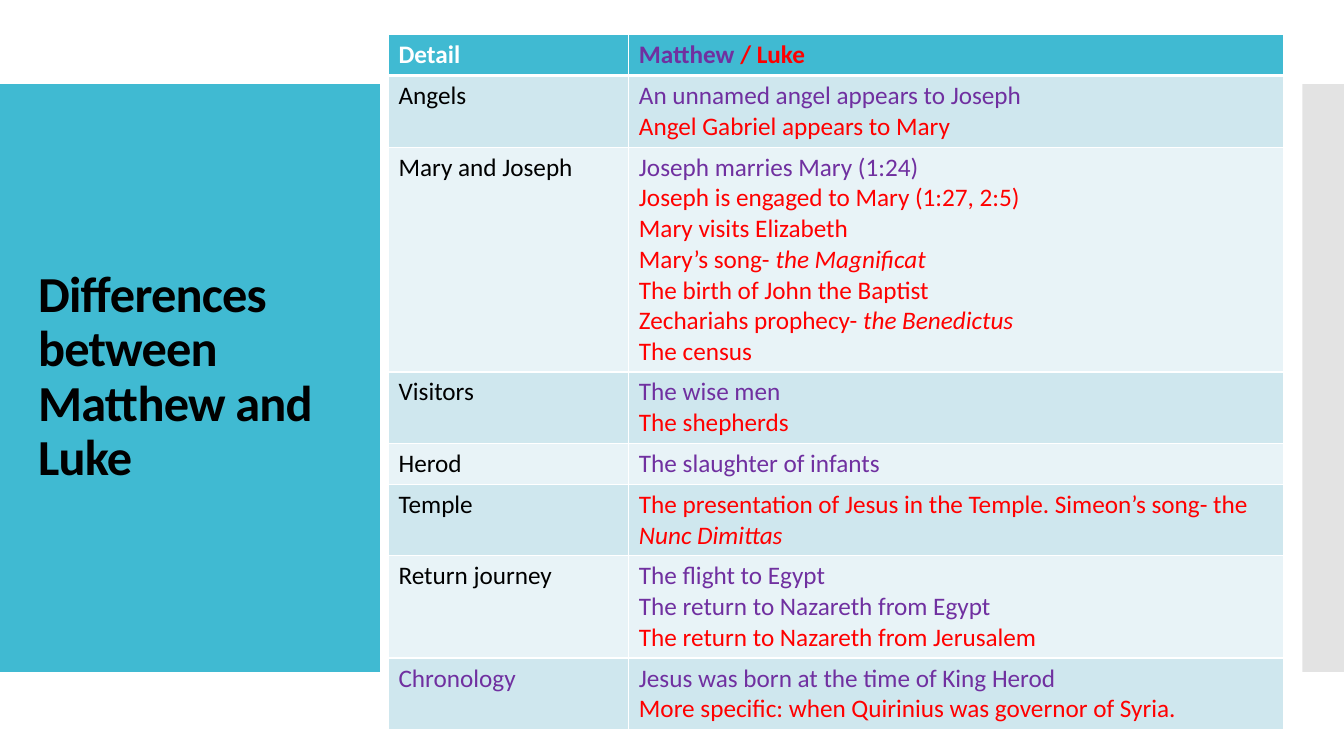
from dataclasses import dataclass
from typing import NamedTuple

from lxml.etree import SubElement
from pptx import Presentation
from pptx.dml.color import RGBColor
from pptx.enum.shapes import MSO_SHAPE
from pptx.enum.text import MSO_ANCHOR
from pptx.oxml.ns import qn
from pptx.shapes.autoshape import Shape
from pptx.slide import Slide
from pptx.table import _Cell
from pptx.text.text import _Paragraph
from pptx.util import Pt


@dataclass(frozen=True)
class Theme:
    """Colours, typeface and sizes used on the slide."""

    accent: str = "40BAD2"
    side: str = "C8C8C8"
    bands: tuple[str, str] = ("CFE7EE", "E8F3F7")
    white: str = "FFFFFF"
    black: str = "000000"
    matthew: str = "7030A0"
    luke: str = "FF0000"
    typeface: str = "Calibri"
    title_size: float = 36
    table_size: float = 18


THEME = Theme()


class Box(NamedTuple):
    """A rectangle in points."""

    left: float
    top: float
    width: float
    height: float


class Words(NamedTuple):
    """A stretch of text in one colour and slant."""

    text: str
    color: str
    italic: bool = False


Line = list[Words]


@dataclass(frozen=True)
class Comparison:
    """One table row: a detail and what each gospel says of it."""

    detail: Words
    accounts: list[Line]
    wrapped_lines: int = 0

    @property
    def height(self) -> float:
        """Return the row height that its lines need."""
        return 29.2 + 21.9 * (len(self.accounts) + self.wrapped_lines - 1)


def matthew(text: str) -> Line:
    """Return a line from Matthew."""
    return [Words(text, THEME.matthew)]


def luke(text: str, song: str = "") -> Line:
    """Return a line from Luke, with an optional song title in italics."""
    line = [Words(text, THEME.luke)]
    return line + [Words(song, THEME.luke, True)] if song else line


def detail(text: str) -> Words:
    """Return the name of a compared detail."""
    return Words(text, THEME.black)


TITLE = Words("Differences between Matthew and Luke", THEME.black)
PANEL = Box(0, 60, 271.4, 420)
SIDE_BAR = Box(930.2, 60, 29.8, 420)
TITLE_BOX = Box(20.2, 88.6, 231.8, 362.2)
TABLE_LEFT, TABLE_TOP = 277.5, 24.8
COLUMN_WIDTHS = (171.7, 467.8)
ROWS = [
    Comparison(
        Words("Detail", THEME.white),
        [[Words("Matthew", THEME.matthew), Words(" / Luke", THEME.luke)]],
    ),
    Comparison(
        detail("Angels"),
        [
            matthew("An unnamed angel appears to Joseph"),
            luke("Angel Gabriel appears to Mary"),
        ],
    ),
    Comparison(
        detail("Mary and Joseph"),
        [
            matthew("Joseph marries Mary (1:24)"),
            luke("Joseph is engaged to Mary (1:27, 2:5)"),
            luke("Mary visits Elizabeth"),
            luke("Mary’s song- ", "the Magnificat"),
            luke("The birth of John the Baptist"),
            luke("Zechariahs prophecy- ", "the Benedictus"),
            luke("The census"),
        ],
    ),
    Comparison(detail("Visitors"), [matthew("The wise men"), luke("The shepherds")]),
    Comparison(detail("Herod"), [matthew("The slaughter of infants")]),
    Comparison(
        detail("Temple"),
        [luke("The presentation of Jesus in the Temple. Simeon’s song- the ", "Nunc Dimittas")],
        wrapped_lines=1,
    ),
    Comparison(
        detail("Return journey"),
        [
            matthew("The flight to Egypt"),
            matthew("The return to Nazareth from Egypt"),
            luke("The return to Nazareth from Jerusalem"),
        ],
    ),
    Comparison(
        Words("Chronology", THEME.matthew),
        [
            matthew("Jesus was born at the time of King Herod"),
            luke("More specific: when Quirinius was governor of Syria."),
        ],
    ),
]


def write_line(para: _Paragraph, line: Line, size: float, bold: bool) -> None:
    """Fill a paragraph, setting on runs only what differs between them."""
    para.font.name = THEME.typeface
    para.font.size = Pt(size)
    para.font.bold = bold
    for words in line:
        span = para.add_run()
        span.text = words.text
        font = para.font if len(line) == 1 else span.font
        font.color.rgb = RGBColor.from_string(words.color)
        font.italic = words.italic


def add_panel(page: Slide, box: Box, color: str) -> Shape:
    """Draw a plain filled rectangle."""
    panel = page.shapes.add_shape(MSO_SHAPE.RECTANGLE, *map(Pt, box))
    panel.shadow.inherit = False
    panel.fill.solid()
    panel.fill.fore_color.rgb = RGBColor.from_string(color)
    panel.line.fill.background()
    return panel


def add_title(page: Slide) -> None:
    """Write the slide title over the coloured panel."""
    frame = page.shapes.add_textbox(*map(Pt, TITLE_BOX)).text_frame
    frame.word_wrap = True
    frame.vertical_anchor = MSO_ANCHOR.MIDDLE
    para = frame.paragraphs[0]
    para.line_spacing = 0.9
    write_line(para, [TITLE], THEME.title_size, True)
    para.runs[0]._r.get_or_add_rPr().set("spc", "-60")


def style_cell(cell: _Cell, color: str, bottom: float) -> None:
    """Give a cell its borders and fill."""
    properties = cell._tc.get_or_add_tcPr()
    for side, width in {"lnL": 1, "lnR": 1, "lnT": 1, "lnB": bottom}.items():
        border = SubElement(properties, qn(f"a:{side}"), w=str(Pt(width)))
        fill = SubElement(border, qn("a:solidFill"))
        SubElement(fill, qn("a:srgbClr"), val=THEME.white)
    cell.fill.solid()
    cell.fill.fore_color.rgb = RGBColor.from_string(color)


def add_comparison_table(page: Slide) -> None:
    """Draw the table that compares the two gospels."""
    size = sum(COLUMN_WIDTHS), sum(row.height for row in ROWS)
    box = Box(TABLE_LEFT, TABLE_TOP, *size)
    table = page.shapes.add_table(len(ROWS), len(COLUMN_WIDTHS), *map(Pt, box)).table
    table.horz_banding = False
    for column, width in zip(table.columns, COLUMN_WIDTHS):
        column.width = Pt(width)
    for index, row in enumerate(ROWS):
        header = index == 0
        table.rows[index].height = Pt(row.height)
        color = THEME.accent if header else THEME.bands[(index - 1) % 2]
        for cell, lines in zip(table.rows[index].cells, ([[row.detail]], row.accounts)):
            style_cell(cell, color, 3 if header else 1)
            for number, line in enumerate(lines):
                frame = cell.text_frame
                para = frame.add_paragraph() if number else frame.paragraphs[0]
                write_line(para, line, THEME.table_size, header)


def main() -> None:
    """Build and save the deck."""
    deck = Presentation()
    deck.slide_width, deck.slide_height = Pt(960), Pt(540)
    page = deck.slides.add_slide(deck.slide_layouts[6])
    add_panel(page, PANEL, THEME.accent)
    side_bar = add_panel(page, SIDE_BAR, THEME.side)
    shade = side_bar.fill._xPr.find(qn("a:solidFill"))[0]
    SubElement(shade, qn("a:alpha"), val="50000")
    add_title(page)
    add_comparison_table(page)
    deck.save("out.pptx")


if __name__ == "__main__":
    main()
